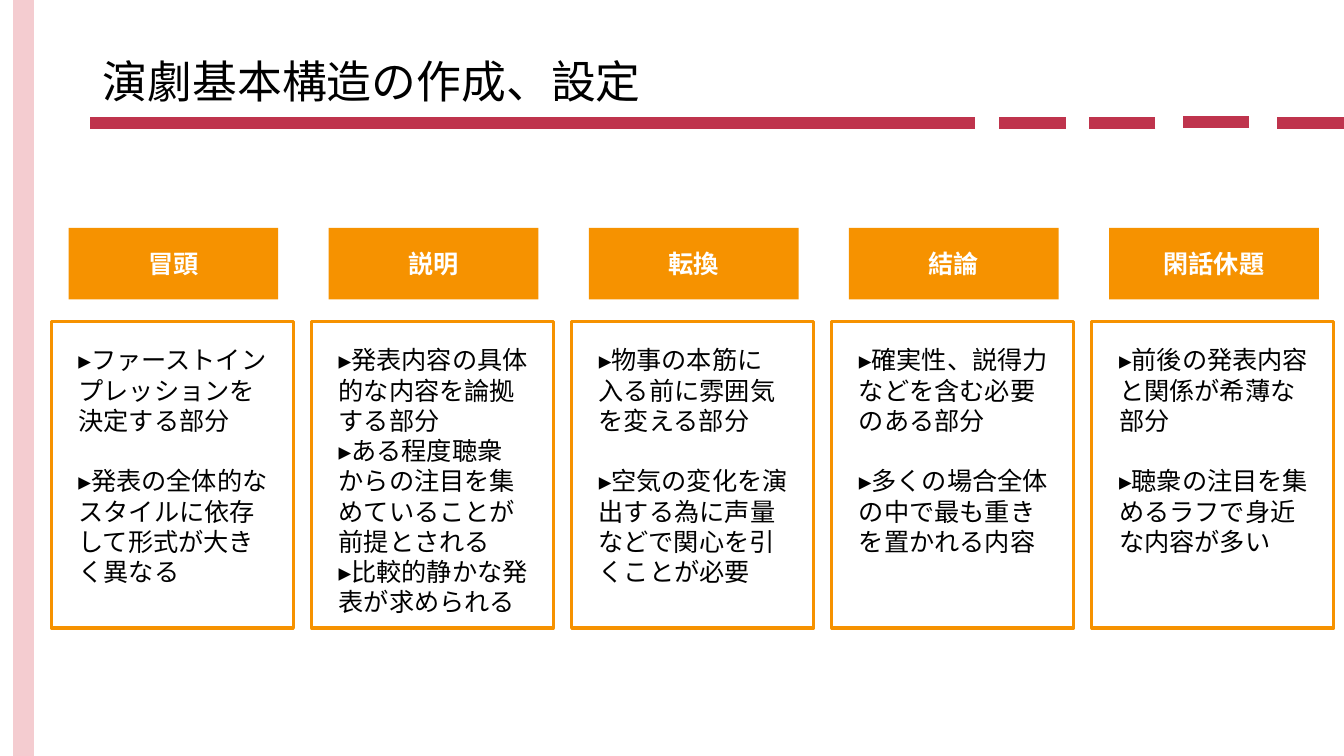
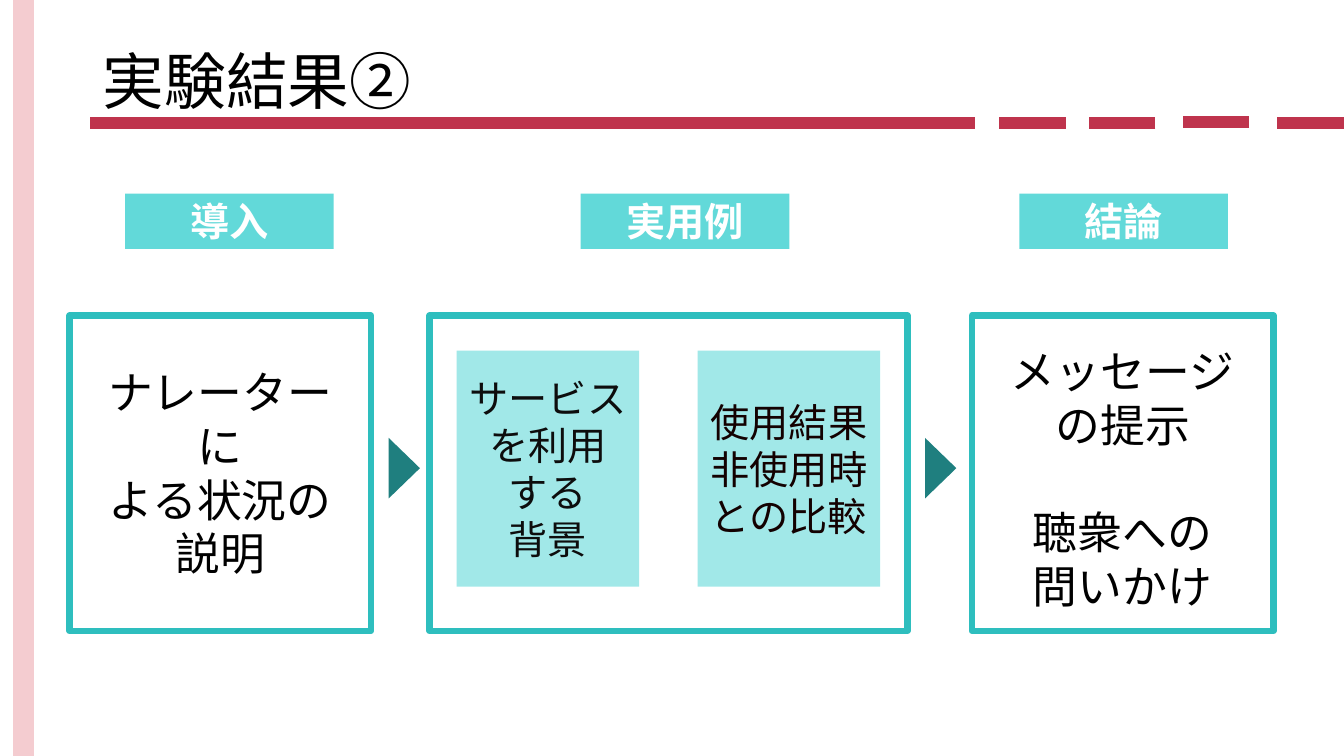
from lxml import etree
from pptx import Presentation
from pptx.dml.color import RGBColor
from pptx.enum.shapes import MSO_CONNECTOR, MSO_SHAPE
from pptx.enum.text import MSO_ANCHOR, MSO_AUTO_SIZE, PP_ALIGN
from pptx.oxml.ns import qn
from pptx.util import Inches, Pt

RECTANGLE, TRIANGLE = MSO_SHAPE.RECTANGLE, MSO_SHAPE.ISOSCELES_TRIANGLE
STRAIGHT = MSO_CONNECTOR.STRAIGHT
TOP, MIDDLE = MSO_ANCHOR.TOP, MSO_ANCHOR.MIDDLE
LEFT, CENTER = PP_ALIGN.LEFT, PP_ALIGN.CENTER
NO_AUTOFIT = MSO_AUTO_SIZE.NONE

FONT = "Noto Sans CJK JP"
LINE_PITCH = 1.2  # line height as a share of the text size
BLACK, WHITE = "000000", "FFFFFF"
PINK, CRIMSON, ORANGE = "F4CCD0", "BF344D", "F69200"
AQUA, TEAL, PALE_AQUA, DEEP_TEAL = "62D9D9", "2EBEBE", "A1E8E8", "1F7F7F"

SLIDE_SIZE = (13.33, 7.5)
TITLE_BOX = (0.92, 0.07, 11.5, 1.45)
SIDE_BAND = (0.23, 0, 0.23, 7.59)
TITLE_RULES = [(0.89, 9.67, 1.22), (9.91, 10.57, 1.22), (10.8, 11.46, 1.22),
               (11.73, 12.39, 1.21), (12.67, 13.33, 1.22)]

# Each body is a list of groups; a wide gap parts one group from the next
STRUCTURE = [
    ("冒頭", [["▸ファーストインプレッションを", "決定する部分"],
             ["▸発表の全体的なスタイルに依存して形式が大きく異なる"]]),
    ("説明", [["▸発表内容の具体的な内容を論拠する部分", "▸ある程度聴衆",
              "からの注目を集めていることが前提とされる",
              "▸比較的静かな発表が求められる"]]),
    ("転換", [["▸物事の本筋に", "入る前に雰囲気を変える部分"],
             ["▸空気の変化を演出する為に声量などで関心を引くことが必要"]]),
    ("結論", [["▸確実性、説得力などを含む必要のある部分"],
             ["▸多くの場合全体の中で最も重きを置かれる内容"]]),
    ("閑話休題", [["▸前後の発表内容と関係が希薄な部分"],
               ["▸聴衆の注目を集めるラフで身近な内容が多い"]]),
]


def rgb(hex_string):
    return RGBColor.from_string(hex_string)


def inches(lengths):
    return [Inches(length) for length in lengths]


def write(shape, groups, size, color=BLACK, bold=False, align=CENTER,
          anchor=MIDDLE, exact=True):
    """Fill a shape with groups of paragraphs in the deck's font."""
    frame = shape.text_frame
    frame_format = {"word_wrap": True, "auto_size": NO_AUTOFIT,
                    "vertical_anchor": anchor}
    for name, value in frame_format.items():
        setattr(frame, name, value)
    paragraph = None
    for group_index, group in enumerate(groups):
        for line_index, words in enumerate(group):
            paragraph = frame.add_paragraph() if paragraph else frame.paragraphs[0]
            new_group = group_index > 0 and line_index == 0
            spacing = {
                "alignment": align,
                "space_before": Pt(size * LINE_PITCH if new_group else 0),
                "line_spacing": Pt(size * LINE_PITCH) if exact else 1.0,
            }
            for name, value in spacing.items():
                setattr(paragraph, name, value)
            run = paragraph.add_run()
            run.text = words
            for name, value in {"name": FONT, "size": Pt(size), "bold": bold}.items():
                setattr(run.font, name, value)
            run.font.color.rgb = rgb(color)
    # East Asian typeface
    for latin in list(shape.element.iter(qn("a:latin"))):
        east_asian = etree.Element(qn("a:ea"))
        east_asian.set("typeface", FONT)
        latin.addnext(east_asian)


def add_block(slide, box, fill=None, outline=None, outline_width=0, kind=RECTANGLE):
    block = slide.shapes.add_shape(kind, *inches(box))
    block.shadow.inherit = False
    if fill:
        block.fill.solid()
        block.fill.fore_color.rgb = rgb(fill)
    else:
        block.fill.background()
    if outline:
        block.line.color.rgb = rgb(outline)
        block.line.width = Pt(outline_width)
    else:
        block.line.fill.background()
    return block


def add_text(slide, box, groups, size, **text_format):
    write(slide.shapes.add_textbox(*inches(box)), groups, size, anchor=TOP, **text_format)


def decorate_layout(layout, slide):
    """Draw the side band and title rules, then hand them to the layout."""
    strokes = [(SIDE_BAND, PINK, 15)]
    strokes += [((right, y, left, y), CRIMSON, 8) for left, right, y in TITLE_RULES]
    for ends, color, width in strokes:
        stroke = slide.shapes.add_connector(STRAIGHT, *inches(ends))
        stroke.line.color.rgb = rgb(color)
        stroke.line.width = Pt(width)
        etree.SubElement(stroke.element.spPr, qn("a:effectLst"))
        layout.shapes.element.append(stroke.element)


def add_titled_slide(prs, layout, title, size):
    slide = prs.slides.add_slide(layout)
    heading = slide.shapes.title
    for name, value in zip(("left", "top", "width", "height"), inches(TITLE_BOX)):
        setattr(heading, name, value)
    write(heading, [[title]], size, align=LEFT)
    return slide


def add_structure_column(slide, box, label, groups):
    """Orange label above an outlined box of points."""
    left, top, width, height = box
    inset, label_height, frame_drop = 0.17, 0.71, 0.93
    inner_left, inner_width = left + inset, width - 2 * inset + 0.02
    header = add_block(slide, (inner_left, top, inner_width, label_height), ORANGE)
    write(header, [[label]], 18, WHITE, bold=True, exact=False)
    frame_top, frame_height = top + frame_drop, height - frame_drop
    add_block(slide, (left, frame_top, width, frame_height), outline=ORANGE,
              outline_width=2.25)
    add_text(slide, (inner_left, frame_top + 0.18, inner_width, frame_height - 0.2),
             groups, 18, align=LEFT)


def add_stage(slide, box, label, label_left):
    """Aqua label above a white frame."""
    header = add_block(slide, (label_left, 1.92, 2.07, 0.55), AQUA)
    write(header, [[label]], 28, WHITE, bold=True, exact=False)
    add_block(slide, box, WHITE, TEAL, 4.5)


def add_stage_text(slide, box, drop, groups):
    left, top, width, height = box
    add_text(slide, (left + 0.18, top + drop, width - 0.36, height - 2 * drop), groups, 32)


def add_use_cases(slide, box, cases):
    """Equal cards, set in from the sides of the stage frame."""
    left, top, width, height = box
    card_width, margin = 1.81, 0.27
    step = width - 2 * margin - card_width
    for index, (lines, color) in enumerate(cases):
        card = add_block(slide, (left + margin + index * step, top + 0.35,
                                 card_width, height - 0.79), PALE_AQUA)
        write(card, [lines], 28, color)


def build_structure(slide):
    for index, (label, groups) in enumerate(STRUCTURE):
        add_structure_column(slide, (0.51 + 2.58 * index, 2.26, 2.4, 3.97), label, groups)


def build_results(slide):
    top, height = 3.13, 3.13
    intro, example, conclusion = [(left, top, width, height) for left, width in
                                  [(0.69, 2.99), (4.26, 4.74), (9.64, 2.99)]]
    add_stage(slide, intro, "導入", 1.24)
    add_stage(slide, example, "実用例", 5.76)
    add_stage(slide, conclusion, "結論", 10.11)
    add_stage_text(slide, intro, 0.44, [["ナレーターに", "よる状況の", "説明"]])
    add_use_cases(slide, example, [
        (["サービスを利用", "する", "背景"], "0D0D0D"),
        (["使用結果", "非使用時との比較"], "130101"),
    ])
    add_stage_text(slide, conclusion, 0.23,
                   [["メッセージの提示"], ["聴衆への", "問いかけ"]])
    # Arrows between the stages
    for left in (3.71, 9.03):
        arrow = add_block(slide, (left, 4.49, 0.6, 0.31), DEEP_TEAL, kind=TRIANGLE)
        arrow.rotation = 90


def main():
    prs = Presentation()
    prs.slide_width, prs.slide_height = inches(SLIDE_SIZE)
    title_only = prs.slide_layouts[5]
    structure = add_titled_slide(prs, title_only, "演劇基本構造の作成、設定", 32)
    decorate_layout(title_only, structure)
    build_structure(structure)
    build_results(add_titled_slide(prs, title_only, "実験結果②", 44))
    prs.save("out.pptx")


if __name__ == "__main__":
    main()
